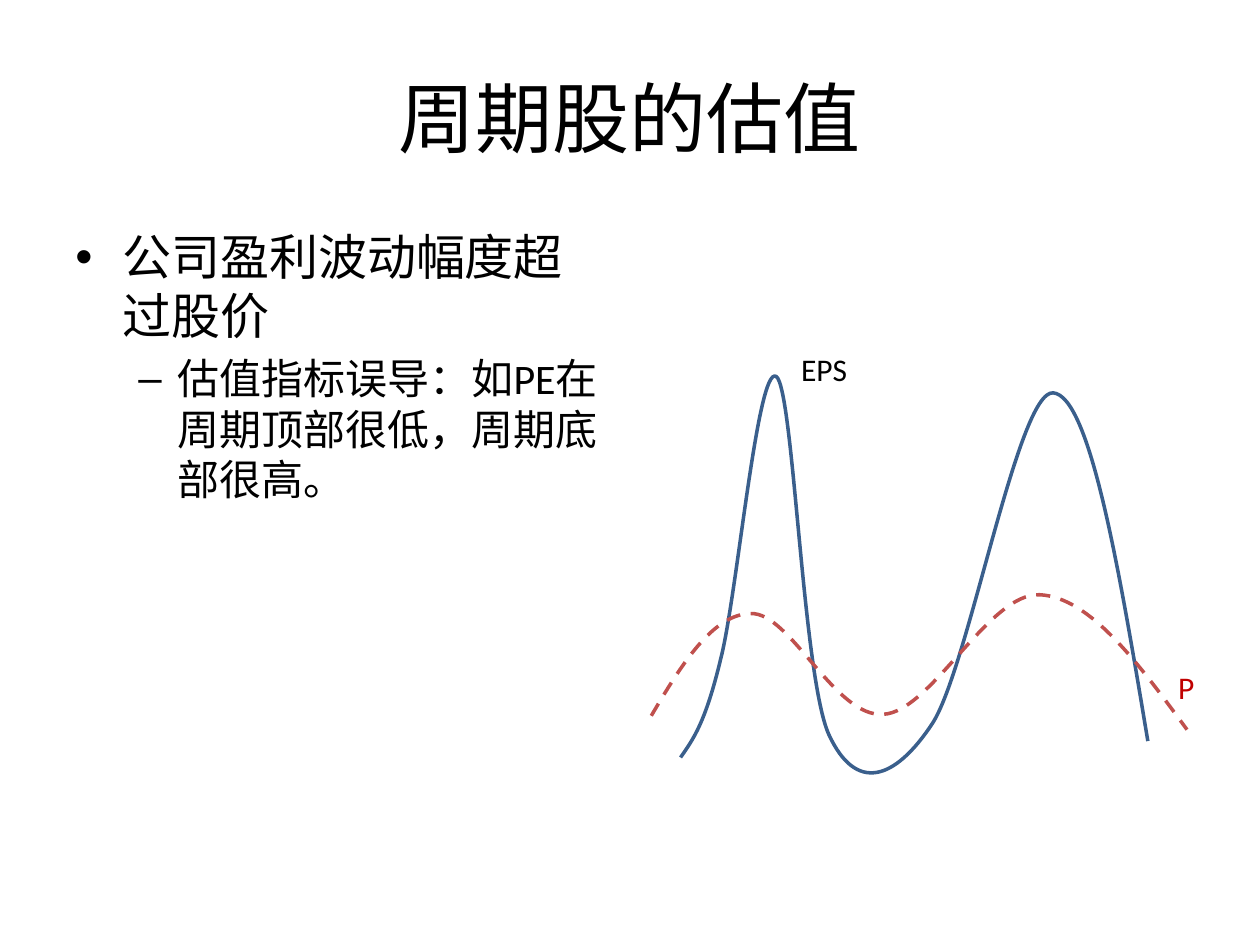
import pptx
import pptx.dml.color
import pptx.enum.dml
import pptx.enum.text
import pptx.oxml
import pptx.oxml.ns
import pptx.util
from lxml import etree

Cm, Pt = pptx.util.Cm, pptx.util.Pt
Align = pptx.enum.text.PP_ALIGN
Anchor = pptx.enum.text.MSO_ANCHOR
Dash = pptx.enum.dml.MSO_LINE

THEME = {
    "font": "Calibri",
    "colours": {"text": "000000", "earnings": "3A5F8C",
                "price": "C0504D", "price label": "C00000"},
    "sizes": {"title": 44, "point": 28, "detail": 24, "label": 18},
    "line": 2,
}


def colour(name):
    return pptx.dml.color.RGBColor.from_string(THEME["colours"][name])


def add_text(page, place, paragraphs, frame_format):
    box = page.shapes.add_textbox(*map(Cm, place))
    for name, value in frame_format.items():
        setattr(box.text_frame, name, value)
    for index, (text, size, ink, bullet, para_format) in enumerate(paragraphs):
        para = box.text_frame.paragraphs[0] if index == 0 else box.text_frame.add_paragraph()
        if bullet:
            mark, margin, hanging = bullet
            properties = para._p.get_or_add_pPr()
            properties.set("marL", str(Cm(margin)))
            properties.set("indent", str(-Cm(hanging)))
            etree.SubElement(properties, pptx.oxml.ns.qn("a:buFont"), typeface="Arial")
            etree.SubElement(properties, pptx.oxml.ns.qn("a:buChar"), char=mark)
        for name, value in para_format.items():
            setattr(para, name, value)
        span = para.add_run()
        span.text = text
        span.font.color.rgb = colour(ink)
        for name, value in {"name": THEME["font"], "size": Pt(THEME["sizes"][size])}.items():
            setattr(span.font, name, value)


def add_curve(page, points, height, ink, dash):
    points = [(Cm(x), Cm(y)) for x, y in points]
    # The anchors set the frame; Bezier segments then replace the straight ones
    builder = page.shapes.build_freeform(*points[0])
    builder.add_line_segments(points[3::3], close=False)
    curve = builder.convert_to_shape()
    outline = curve._element.find(".//" + pptx.oxml.ns.qn("a:path"))
    for segment in outline.findall(pptx.oxml.ns.qn("a:lnTo")):
        outline.remove(segment)
    for start in range(1, len(points), 3):
        bezier = etree.SubElement(outline, pptx.oxml.ns.qn("a:cubicBezTo"))
        for x, y in points[start:start + 3]:
            etree.SubElement(bezier, pptx.oxml.ns.qn("a:pt"),
                             x=str(x - curve.left), y=str(y - curve.top))
    curve.height = Cm(height)
    outline.set("h", str(curve.height))
    curve.shadow.inherit = False
    curve.fill.background()
    curve.line.color.rgb = colour(ink)
    for name, value in {"width": Pt(THEME["line"]), "dash_style": dash}.items():
        setattr(curve.line, name, value)


deck = pptx.Presentation()
deck.slide_width, deck.slide_height = Cm(25.4), Cm(19.05)
page = deck.slides.add_slide(deck.slide_layouts[6])

# Title
add_text(page, (1.27, 0.76, 22.86, 3.18),
         [("周期股的估值", "title", "text", None, {"alignment": Align.CENTER})],
         {"word_wrap": True, "vertical_anchor": Anchor.MIDDLE})

# Bullet points
add_text(page, (1.27, 4.45, 11.22, 12.57), [
    ("公司盈利波动幅度超过股价", "point", "text", ("•", 0.95, 0.95), {}),
    ("估值指标误导：如PE在周期顶部很低，周期底部很高。", "detail", "text",
     ("–", 2.06, 0.79), {"level": 1, "space_before": Pt(4.8)}),
], {"word_wrap": True})

# Curves: a start, then two control points and an anchor per segment
earnings = [
    (13.72, 15.27),
    (13.97, 14.91), (14.22, 14.58), (14.53, 13.28),
    (14.86, 12.01), (15.27, 7.34), (15.65, 7.59),
    (16.00, 7.85), (16.18, 13.64), (16.71, 14.81),
    (17.25, 15.98), (18.03, 15.75), (18.80, 14.58),
    (19.53, 13.44), (20.52, 7.87), (21.23, 7.92),
    (21.97, 7.98), (22.56, 11.46), (23.14, 14.94),
]
price = [
    (13.13, 14.43),
    (13.74, 13.39), (14.38, 12.37), (15.14, 12.37),
    (15.93, 12.34), (16.84, 14.48), (17.81, 14.40),
    (18.77, 14.35), (19.94, 11.94), (20.96, 11.99),
    (21.97, 12.04), (22.94, 13.36), (23.93, 14.71),
]
add_curve(page, earnings, 7.98, "earnings", Dash.SOLID)
add_curve(page, price, 2.72, "price", Dash.DASH)

# Curve labels
for text, ink, place in [("EPS", "text", (15.90, 6.93, 2.01, 1.02)),
                         ("P", "price label", (23.50, 13.34, 1.19, 1.02))]:
    add_text(page, place, [(text, "label", ink, None, {})],
             {"word_wrap": True, "auto_size": pptx.enum.text.MSO_AUTO_SIZE.SHAPE_TO_FIT_TEXT})

deck.save("out.pptx")
